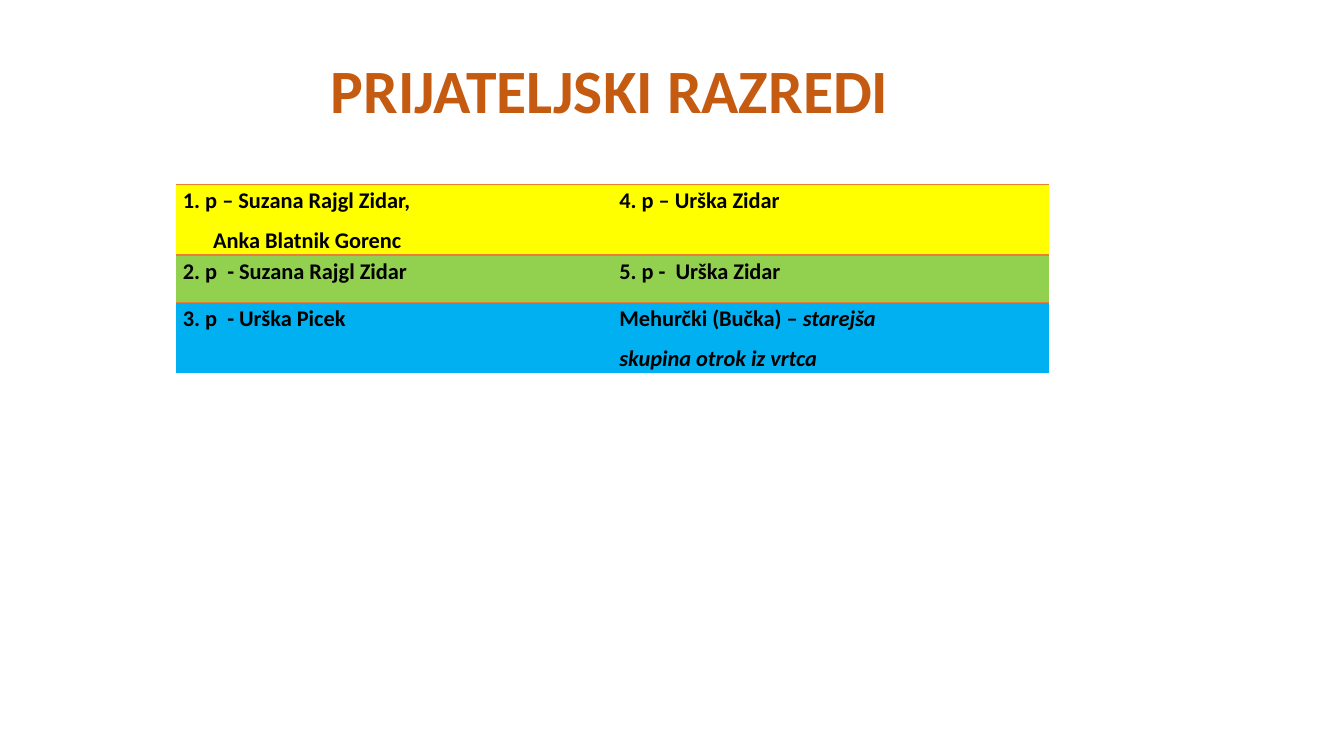
from lxml import etree
from pptx import Presentation, util as u
from pptx.dml.color import RGBColor
from pptx.enum import text
from pptx.oxml import ns

NO_STYLE = "{2D5ABB26-0587-4C30-8999-92F81FD0307C}"


def rgb(value):
    return RGBColor.from_string(value)


class Deck:
    font = "Calibri"
    title_color, text_color, rule_color = "C55A11", "000000", "ED7D31"

    def __init__(self, prs):
        self.s = prs.slides.add_slide(prs.slide_layouts[5])

    def style(self, p, size, color):
        f = p.font
        f.name, f.size, f.bold = self.font, u.Pt(size), True
        f.color.rgb = rgb(color)

    def title(self, words, x, y, w, h):
        sp = self.s.shapes.title
        sp.left, sp.top, sp.width, sp.height = map(u.Cm, (x, y, w, h))
        tf = sp.text_frame
        tf.text = words
        tf.vertical_anchor = text.MSO_ANCHOR.MIDDLE
        p = tf.paragraphs[0]
        p.alignment, p.line_spacing = text.PP_ALIGN.LEFT, 0.9
        self.style(p, 44, self.title_color)

    def table(self, rows, x, y, w, row_h):
        """Each row is (fill, ruled above, cells); a cell is a list of lines."""
        frame = self.s.shapes.add_table(len(rows), len(rows[0][2]), u.Cm(x), u.Cm(y),
                                        u.Cm(w), u.Cm(row_h * len(rows)))
        tbl = frame.table
        tbl.first_row = tbl.horz_banding = False
        frame._element.find(".//" + ns.qn("a:tableStyleId")).text = NO_STYLE
        for i, (fill, ruled, cells) in enumerate(rows):
            for j, lines in enumerate(cells):
                self.cell(tbl.cell(i, j), lines, fill, ruled)

    def cell(self, cell, lines, fill, ruled):
        cell.margin_left = cell.margin_right = u.Cm(0.18)
        cell.margin_top, cell.margin_bottom = u.Cm(0.03), 0
        cell.fill.solid()
        cell.fill.fore_color.rgb = rgb(fill)
        if ruled:
            self.rule_above(cell)
        tf = cell.text_frame
        for n, (runs, indent) in enumerate(lines):
            p = tf.add_paragraph() if n else tf.paragraphs[0]
            p.line_spacing, p.space_after = 1.06, u.Pt(8)
            if indent:
                p._p.get_or_add_pPr().set("marL", str(u.Cm(indent)))
            self.style(p, 16, self.text_color)
            for words, italic in runs:
                r = p.add_run()
                r.text = words
                if italic:
                    r.font.italic = True

    def rule_above(self, cell):
        ln = etree.Element(ns.qn("a:lnT"), w=str(u.Pt(1)))
        fill = etree.SubElement(ln, ns.qn("a:solidFill"))
        etree.SubElement(fill, ns.qn("a:srgbClr"), val=self.rule_color)
        cell._tc.get_or_add_tcPr().insert(0, ln)


def line(words, indent=0):
    return [(words, False)], indent


def main():
    prs = Presentation()
    prs.slide_width, prs.slide_height = u.Cm(33.87), u.Cm(19.05)
    deck = Deck(prs)

    # Heading
    deck.title("PRIJATELJSKI RAZREDI", 8.08, 0.81, 21.49, 3.1)

    # Paired classes
    deck.table([
        ("FFFF00", True, [
            [line("1. p – Suzana Rajgl Zidar,"), line("Anka Blatnik Gorenc", 0.76)],
            [line("4. p – Urška Zidar")]]),
        ("92D050", True, [
            [line("2. p  - Suzana Rajgl Zidar")],
            [line("5. p -  Urška Zidar")]]),
        ("00B0F0", False, [
            [line("3. p  - Urška Picek")],
            [([("Mehurčki (Bučka) – ", False), ("starejša", True)], 0),
             ([("skupina otrok iz vrtca", True)], 0)]]),
    ], 4.43, 4.65, 22, 1.19)

    prs.save("out.pptx")


if __name__ == "__main__":
    main()
